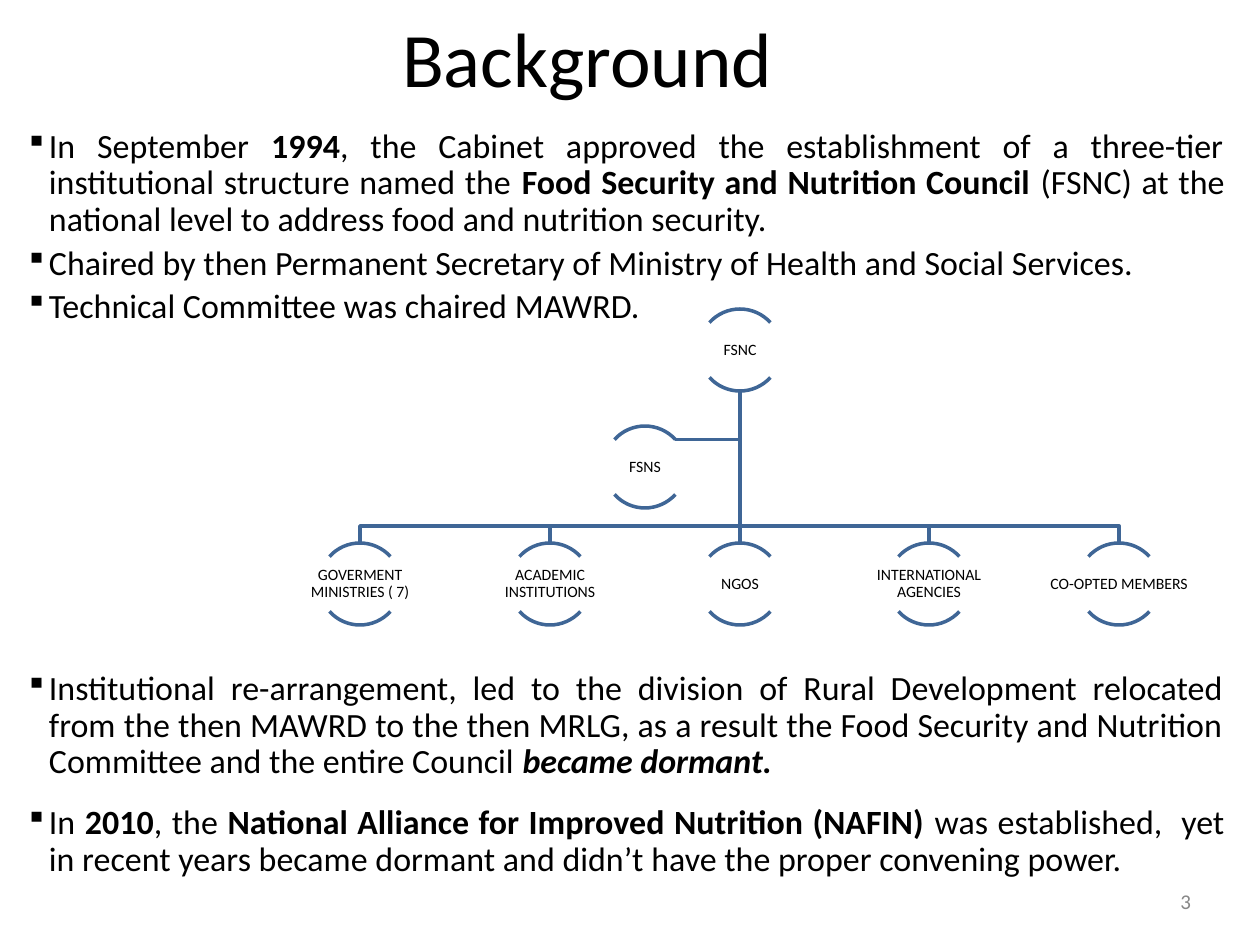
import math
from dataclasses import dataclass

import pptx
import pptx.dml.color
import pptx.enum.shapes
import pptx.enum.text
import pptx.oxml
import pptx.oxml.ns
import pptx.util
from pptx.shapes.autoshape import Shape
from pptx.slide import Slide
from pptx.text.text import TextFrame

PX = 914400 / 126
BLACK = "000000"
GREY = "888888"
LINE_BLUE = "3F6696"
ALIGN = pptx.enum.text.PP_ALIGN
qn = pptx.oxml.ns.qn

RADIUS = 41
HALF_ANGLE = 48
TRUNK_X = 740
FIRST_COLUMN, LAST_COLUMN = 360, 1119
TOP_ROW, MIDDLE_ROW, BOTTOM_ROW = 350, 467, 584
BRANCH_Y = 526
LABEL_WIDTH, LABEL_LINE = 156, 18
BULLET_INDENT = 20


@dataclass
class Node:
    label: str
    x: int
    y: int
    lines: int = 1


@dataclass
class Run:
    text: str
    bold: bool = False
    italic: bool = False


@dataclass
class Bullet:
    runs: list[Run]
    space_before: int


COUNCIL = Node("FSNC", TRUNK_X, TOP_ROW)
SECRETARIAT = Node("FSNS", 645, MIDDLE_ROW)
MEMBER_LABELS = [
    ("GOVERMENT MINISTRIES ( 7)", 2),
    ("ACADEMIC INSTITUTIONS", 2),
    ("NGOS", 1),
    ("INTERNATIONAL AGENCIES", 2),
    ("CO-OPTED MEMBERS", 1),
]
COLUMN_STEP = (LAST_COLUMN - FIRST_COLUMN) / (len(MEMBER_LABELS) - 1)
MEMBERS = [
    Node(label, round(FIRST_COLUMN + column * COLUMN_STEP), BOTTOM_ROW, lines)
    for column, (label, lines) in enumerate(MEMBER_LABELS)
]

# The space before the fourth bullet leaves room for the organisation chart.
BULLETS = [
    Bullet([
        Run("In September "),
        Run("1994", bold=True),
        Run(", the Cabinet approved the establishment of a three-tier "
            "institutional structure named the "),
        Run("Food Security and Nutrition Council", bold=True),
        Run(" (FSNC) at the national level to address food and nutrition security."),
    ], 0),
    Bullet([Run("Chaired by then Permanent Secretary of Ministry of Health "
                "and Social Services.")], 4),
    Bullet([Run("Technical Committee was chaired MAWRD.")], 4),
    Bullet([
        Run("Institutional re-arrangement, led to the division of Rural Development "
            "relocated from the then MAWRD to the then MRLG, as a result the Food "
            "Security and Nutrition Committee and the entire Council "),
        Run("became dormant.", bold=True, italic=True),
    ], 197),
    Bullet([
        Run("In "),
        Run("2010", bold=True),
        Run(", the "),
        Run("National Alliance for Improved Nutrition (NAFIN) ", bold=True),
        Run("was established,  yet in recent years became dormant and didn’t have "
            "the proper convening power."),
    ], 14),
]


def emu(px: float) -> int:
    return round(px * PX)


def color(value: str) -> pptx.dml.color.RGBColor:
    return pptx.dml.color.RGBColor.from_string(value)


def place(shape: Shape, left: int, top: int, width: int, height: int) -> None:
    shape.left, shape.top = emu(left), emu(top)
    shape.width, shape.height = emu(width), emu(height)


def set_frame(frame: TextFrame, *, inset: int = 6, wrap: bool = True,
              anchor=pptx.enum.text.MSO_ANCHOR.MIDDLE) -> None:
    frame.margin_left = frame.margin_right = emu(inset)
    frame.margin_top = frame.margin_bottom = emu(inset)
    frame.word_wrap = wrap
    frame.auto_size = pptx.enum.text.MSO_AUTO_SIZE.NONE
    frame.vertical_anchor = anchor


def add_run(paragraph, text: str, *, size: float, hex_color: str = BLACK,
            bold: bool = False, italic: bool = False) -> None:
    run = paragraph.add_run()
    run.text = text
    run.font.name = "Calibri"
    run.font.size = pptx.util.Pt(size)
    run.font.bold, run.font.italic = bold, italic
    run.font.color.rgb = color(hex_color)


def add_text_box(slide: Slide, left: int, top: int, width: int, height: int) -> TextFrame:
    shape = slide.shapes.add_textbox(0, 0, 0, 0)
    place(shape, left, top, width, height)
    return shape.text_frame


def add_title(slide: Slide) -> None:
    title = slide.shapes.title
    place(title, 29, -9, 1134, 132)
    set_frame(title.text_frame)
    paragraph = title.text_frame.paragraphs[0]
    paragraph.alignment = ALIGN.CENTER
    add_run(paragraph, "Background ", size=44)


def add_bullets(slide: Slide) -> None:
    frame = add_text_box(slide, 23, 123, 1208, 808)
    set_frame(frame, anchor=pptx.enum.text.MSO_ANCHOR.TOP)
    for index, bullet in enumerate(BULLETS):
        paragraph = frame.add_paragraph() if index else frame.paragraphs[0]
        paragraph.alignment = ALIGN.JUSTIFY
        paragraph.line_spacing = 0.9
        paragraph.space_before = pptx.util.Pt(bullet.space_before)
        for run in bullet.runs:
            add_run(paragraph, run.text, size=19.4, bold=run.bold, italic=run.italic)
        properties = paragraph._p.get_or_add_pPr()
        properties.set("marL", str(emu(BULLET_INDENT)))
        properties.set("indent", str(-emu(BULLET_INDENT)))
        # In Wingdings this character is the small square.
        for tag, attributes in (("a:buFont", {"typeface": "Wingdings"}),
                                ("a:buChar", {"char": "§"})):
            properties.append(properties.makeelement(qn(tag), attributes))


def add_open_line(slide: Slide, points: list[tuple[float, float]]) -> Shape:
    (start_x, start_y), *rest = [(emu(x), emu(y)) for x, y in points]
    builder = slide.shapes.build_freeform(start_x, start_y)
    builder.add_line_segments(rest, close=False)
    shape = builder.convert_to_shape()
    shape.shadow.inherit = False
    shape.fill.background()
    shape.line.color.rgb = color(LINE_BLUE)
    shape.line.width = pptx.util.Pt(2)
    return shape


def add_straight_line(slide: Slide, x: int, top: int, bottom: int) -> None:
    connector = slide.shapes.add_connector(
        pptx.enum.shapes.MSO_CONNECTOR.STRAIGHT, emu(x), emu(top), emu(x), emu(bottom))
    connector.line.color.rgb = color(LINE_BLUE)
    connector.line.width = pptx.util.Pt(2)
    properties = connector._element.spPr
    properties.append(properties.makeelement(qn("a:effectLst"), {}))


def arc_point(node: Node, degrees: float, along: float = 0) -> tuple[float, float]:
    """Point on the circle, clockwise from its top, moved along its tangent by radii."""
    sine, cosine = math.sin(math.radians(degrees)), math.cos(math.radians(degrees))
    return (node.x + RADIUS * (sine + along * cosine),
            node.y + RADIUS * (along * sine - cosine))


def add_arc(slide: Slide, node: Node, middle: int) -> None:
    """Draw two Bézier curves that meet at the middle of the arc."""
    handle = 4 / 3 * math.tan(math.radians(HALF_ANGLE / 4))
    points = [arc_point(node, middle - HALF_ANGLE)]
    for start in (middle - HALF_ANGLE, middle):
        end = start + HALF_ANGLE
        points += [arc_point(node, start, handle), arc_point(node, end, -handle),
                   arc_point(node, end)]
    shape = add_open_line(slide, points)
    segments = list(shape._element.iter(qn("a:lnTo")))
    for first in range(0, len(segments), 3):
        curve = segments[first].makeelement(qn("a:cubicBezTo"), {})
        segments[first].addprevious(curve)
        for segment in segments[first:first + 3]:
            curve.append(segment[0])
            segment.getparent().remove(segment)


def add_node(slide: Slide, node: Node) -> None:
    for middle in (0, 180):
        add_arc(slide, node, middle)
    height = LABEL_LINE * node.lines
    frame = add_text_box(slide, node.x - LABEL_WIDTH // 2, node.y - height // 2,
                         LABEL_WIDTH, height)
    set_frame(frame, inset=1)
    paragraph = frame.paragraphs[0]
    paragraph.alignment = ALIGN.CENTER
    paragraph.line_spacing = 0.9
    add_run(paragraph, node.label, size=9)


def add_organisation_chart(slide: Slide) -> None:
    trunk_top, member_top = TOP_ROW + RADIUS, BOTTOM_ROW - RADIUS
    join_x, join_y = arc_point(SECRETARIAT, HALF_ANGLE)
    add_open_line(slide, [(TRUNK_X, trunk_top), (TRUNK_X, join_y), (join_x, join_y)])
    for member in MEMBERS:
        if member.x == TRUNK_X:
            add_straight_line(slide, TRUNK_X, trunk_top, member_top)
        else:
            add_open_line(slide, [(TRUNK_X, trunk_top), (TRUNK_X, BRANCH_Y),
                                  (member.x, BRANCH_Y), (member.x, member_top)])
    for node in [COUNCIL, *MEMBERS, SECRETARIAT]:
        add_node(slide, node)


def add_slide_number(slide: Slide) -> None:
    frame = add_text_box(slide, 1172, 884, 25, 34)
    set_frame(frame, wrap=False)
    paragraph = frame.paragraphs[0]
    paragraph.alignment = ALIGN.RIGHT
    add_run(paragraph, "3", size=12, hex_color=GREY)


def main() -> None:
    presentation = pptx.Presentation()
    presentation.slide_width = pptx.util.Inches(10)
    presentation.slide_height = pptx.util.Inches(7.5)
    slide = presentation.slides.add_slide(presentation.slide_layouts[5])
    add_title(slide)
    add_bullets(slide)
    add_slide_number(slide)
    add_organisation_chart(slide)
    presentation.save("out.pptx")


if __name__ == "__main__":
    main()
